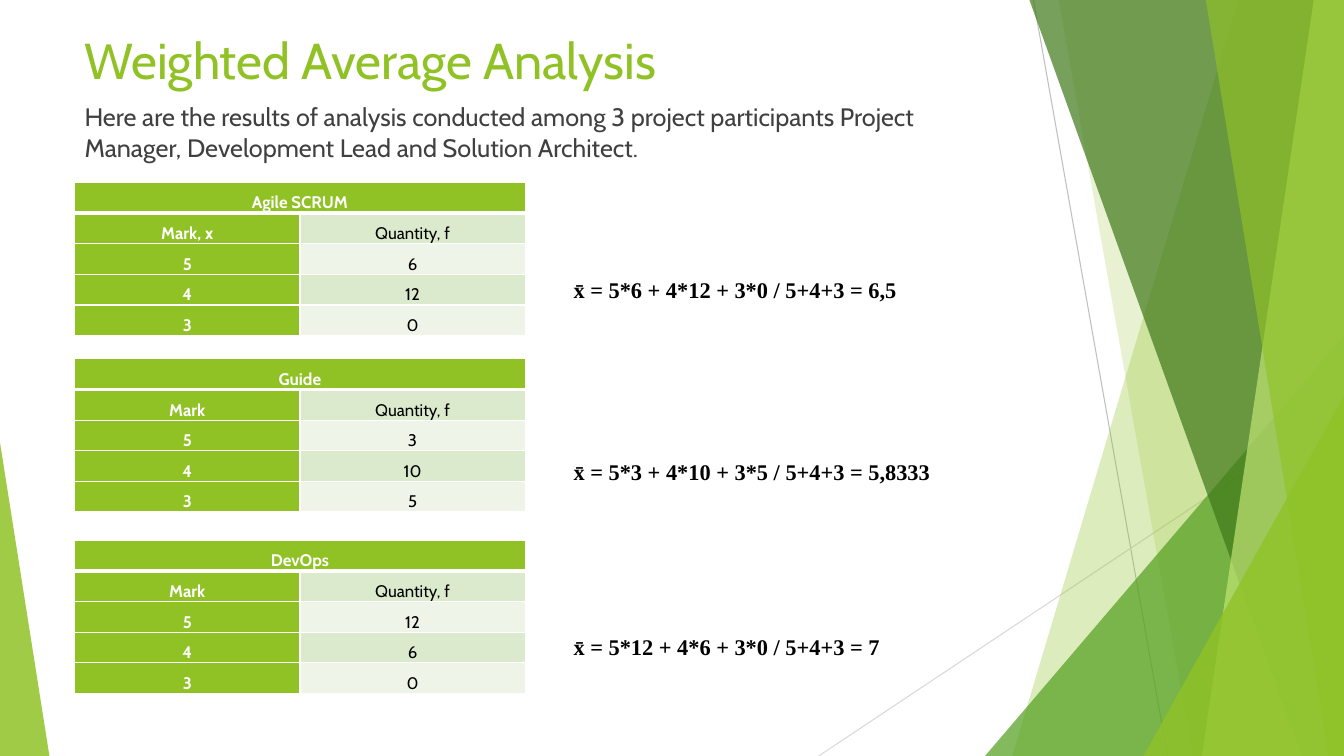
"""Build the weighted average analysis slide."""
from lxml import etree
from pptx import Presentation
from pptx.dml.color import RGBColor
from pptx.enum.shapes import MSO_CONNECTOR, MSO_SHAPE
from pptx.enum.text import MSO_ANCHOR, PP_ALIGN
from pptx.oxml.ns import qn
from pptx.util import Emu, Inches, Pt

STRAIGHT = MSO_CONNECTOR.STRAIGHT
TRIANGLE = MSO_SHAPE.ISOSCELES_TRIANGLE
TOP = MSO_ANCHOR.TOP
LEFT, CENTER, JUSTIFY = PP_ALIGN.LEFT, PP_ALIGN.CENTER, PP_ALIGN.JUSTIFY

WHITE = RGBColor(0xFF, 0xFF, 0xFF)
BLACK = RGBColor(0, 0, 0)
BODY_GRAY = RGBColor(0x40, 0x40, 0x40)
LIME = RGBColor(0x90, 0xC2, 0x26)
GREEN = RGBColor(0x54, 0xA0, 0x21)
FOREST = RGBColor(0x3F, 0x78, 0x19)
PALE_LIME = RGBColor(0xC0, 0xE4, 0x74)
BANDS = (RGBColor(0xEE, 0xF4, 0xE8), RGBColor(0xDB, 0xE9, 0xCD))
LINE_GRAY = RGBColor(0xBF, 0xBF, 0xBF)
LIGHT_LINE_GRAY = RGBColor(0xD9, 0xD9, 0xD9)

WIDTH, HEIGHT = 13.33, 7.5
UNITS_PER_INCH = 100
MARGIN = 0.74
HEADING_WIDTH = 9.4
TABLE_WIDTH, TABLE_HEIGHT = 4.47, 1.52
FORMULA_LEFT = 5.59
SANS, SERIF = "Cabin", "Times New Roman"

TITLE = "Weighted Average Analysis"
INTRODUCTION = (
    "Here are the results of analysis conducted among 3 project participants "
    "Project Manager, Development Lead and Solution Architect."
)
METHODS = [
    {"name": "Agile SCRUM", "top": 1.81, "mark": "Mark, x", "quantities": (6, 12, 0),
     "formula": "x̄ = 5*6 + 4*12 + 3*0 / 5+4+3 = 6,5", "formula_box": (2.56, 3.56, 0.46)},
    {"name": "Guide", "top": 3.56, "mark": "Mark", "quantities": (3, 10, 5),
     "formula": "x̄ = 5*3 + 4*10 + 3*5 / 5+4+3 = 5,8333", "formula_box": (4.36, 3.91, 0.5)},
    {"name": "DevOps", "top": 5.36, "mark": "Mark", "quantities": (12, 6, 0),
     "formula": "x̄ = 5*12 + 4*6 + 3*0 / 5+4+3 = 7", "formula_box": (6.1, 3.56, 0.46)},
]
MARKS = (5, 4, 3)

RAYS = [
    ((10.25, 0), (11.58, HEIGHT), LINE_GRAY),
    ((WIDTH, 4.03), (8.12, HEIGHT), LIGHT_LINE_GRAY),
]
BLADES = [
    ("band", 12.28, 10.04, LIME, 30),
    ("band", 10.5, 11.83, LIME, 20),
    ("triangle", 9.77, 3.56, 3.33, 1, GREEN, 72),
    ("band", 10.21, 12.91, FOREST, 70),
    ("band", 13.03, 11.92, PALE_LIME, 70),
    ("band", 11.96, 13.18, LIME, 65),
    ("triangle", 11.34, 1.99, 3.93, 1, LIME, 80),
    ("triangle", 0, 0.49, 4.39, 0, LIME, 85),
]


def write_text(frame, text, *, size, color, font=SANS, bold=False, align=LEFT,
               line_spacing=None, space_after=None):
    frame.word_wrap = True
    paragraph = frame.paragraphs[0]
    paragraph.alignment = align
    paragraph.line_spacing = line_spacing
    if space_after is not None:
        paragraph.space_after = Pt(space_after)
    run = paragraph.add_run()
    run.text = text
    run.font.name = font
    run.font.size = Pt(size)
    run.font.bold = bold
    run.font.color.rgb = color


def add_text(slide, text, left, top, width, height, **text_format):
    box = slide.shapes.add_textbox(*map(Inches, (left, top, width, height)))
    box.text_frame.vertical_anchor = TOP
    write_text(box.text_frame, text, **text_format)


def add_ray(slide, start, end, color):
    ray = slide.shapes.add_connector(STRAIGHT, *map(Inches, (*start, *end)))
    ray.line.color.rgb = color
    ray.line.width = Pt(0.75)
    etree.SubElement(ray._element.spPr, qn("a:effectLst"))


def paint(shape, color, opacity):
    shape.shadow.inherit = False
    shape.line.fill.background()
    shape.fill.solid()
    shape.fill.fore_color.rgb = color
    color_element = shape._element.spPr.find(qn("a:solidFill"))[0]
    etree.SubElement(color_element, qn("a:alpha"), val=str(opacity * 1000))


def add_band(slide, top_left, bottom_left, color, opacity):
    corners = [(top_left, 0), (WIDTH, 0), (WIDTH, HEIGHT), (bottom_left, HEIGHT)]
    points = [(x * UNITS_PER_INCH, y * UNITS_PER_INCH) for x, y in corners]
    builder = slide.shapes.build_freeform(*points[0], scale=Inches(1) / UNITS_PER_INCH)
    builder.add_line_segments(points[1:])
    paint(builder.convert_to_shape(), color, opacity)


def add_triangle(slide, left, width, top, apex, color, opacity):
    box = map(Inches, (left, top, width, HEIGHT - top))
    triangle = slide.shapes.add_shape(TRIANGLE, *box)
    triangle.adjustments[0] = apex
    paint(triangle, color, opacity)


def style_cell(cell, row, color):
    properties = cell._tc.get_or_add_tcPr()
    thick_sides = {0: "lnB", 1: "lnT"}
    for side in ("lnL", "lnR", "lnT", "lnB"):
        points = 3 if thick_sides.get(row) == side else 1
        border = etree.SubElement(properties, qn(f"a:{side}"), w=str(Pt(points)))
        fill = etree.SubElement(border, qn("a:solidFill"))
        etree.SubElement(fill, qn("a:srgbClr"), val=str(WHITE))
    cell.margin_left = cell.margin_right = Inches(0.07)
    cell.margin_top = cell.margin_bottom = Emu(0)
    cell.fill.solid()
    cell.fill.fore_color.rgb = color


def add_marks_table(slide, method):
    rows = [(method["name"], ""), (method["mark"], "Quantity, f")]
    rows += zip(map(str, MARKS), map(str, method["quantities"]))
    box = (MARGIN, method["top"], TABLE_WIDTH, TABLE_HEIGHT)
    table = slide.shapes.add_table(len(rows), 2, *map(Inches, box)).table
    table.cell(0, 0).merge(table.cell(0, 1))
    for row, values in enumerate(rows):
        for column, value in enumerate(values):
            heading = row == 0 or column == 0
            cell = table.cell(row, column)
            style_cell(cell, row, LIME if heading else BANDS[row % 2])
            if value:
                write_text(cell.text_frame, value, size=12, bold=heading, align=CENTER,
                           color=WHITE if heading else BLACK,
                           line_spacing=1.5, space_after=10)


def main():
    presentation = Presentation()
    presentation.slide_width = Inches(WIDTH)
    presentation.slide_height = Inches(HEIGHT)
    slide = presentation.slides.add_slide(presentation.slide_layouts[6])
    for ray in RAYS:
        add_ray(slide, *ray)
    builders = {"band": add_band, "triangle": add_triangle}
    for kind, *geometry in BLADES:
        builders[kind](slide, *geometry)
    add_text(slide, TITLE, MARGIN, 0.24, HEADING_WIDTH, 0.72, size=36, color=LIME)
    add_text(slide, INTRODUCTION, MARGIN, 0.96, HEADING_WIDTH, 0.8, size=18, color=BODY_GRAY)
    for method in METHODS:
        add_marks_table(slide, method)
        add_text(slide, method["formula"], FORMULA_LEFT, *method["formula_box"],
                 size=16, color=BLACK, font=SERIF, bold=True, align=JUSTIFY,
                 line_spacing=1.5, space_after=10)
    presentation.save("out.pptx")


if __name__ == "__main__":
    main()
